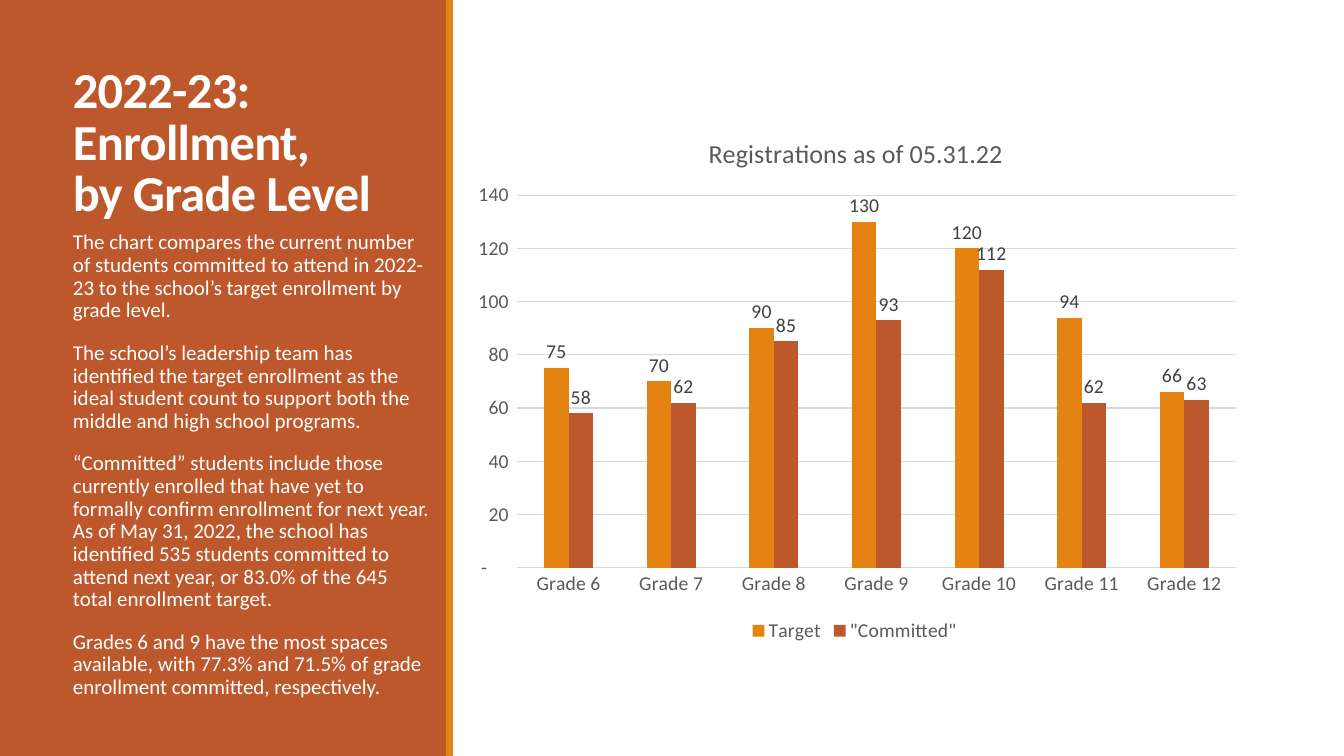
from lxml import etree
from pptx import Presentation
from pptx import util as u
from pptx.chart import data as chart_data
from pptx.dml.color import RGBColor
from pptx.enum import chart as charts, shapes, text
from pptx.oxml.ns import qn

RUST = RGBColor(0xBD, 0x58, 0x2C)
ORANGE = RGBColor(0xE4, 0x83, 0x12)
WHITE = RGBColor(0xFF, 0xFF, 0xFF)
GREY = RGBColor(0x59, 0x59, 0x59)
DARK = RGBColor(0x40, 0x40, 0x40)
PALE = RGBColor(0xD9, 0xD9, 0xD9)

FONT = "Calibri"
COUNT_FORMAT = r'_(* #,##0_);_(* \(#,##0\);_(* "-"??_);_(@_)'

TITLE_LINES = ["2022-23: Enrollment,", "by Grade Level"]
NOTES = [
    "The chart compares the current number of students committed to attend in "
    "2022-23 to the school’s target enrollment by grade level.",
    "The school’s leadership team has identified the target enrollment as the "
    "ideal student count to support both the middle and high school programs.",
    "“Committed” students include those currently enrolled that have yet to "
    "formally confirm enrollment for next year. As of May 31, 2022, the school "
    "has identified 535 students committed to attend next year, or 83.0% of the "
    "645 total enrollment target.",
    "Grades 6 and 9 have the most spaces available, with 77.3% and 71.5% of "
    "grade enrollment committed, respectively.",
]
GRADES = [f"Grade {number}" for number in range(6, 13)]
SERIES = [
    ("Target", ORANGE, [75, 70, 90, 130, 120, 94, 66]),
    ('"Committed"', RUST, [58, 62, 85, 93, 112, 62, 63]),
]


def apply_format(target, values):
    for name, value in values.items():
        setattr(target, name, value)


def style_font(font, size, color, bold=False):
    apply_format(font, {"name": FONT, "size": u.Pt(size), "bold": bold})
    font.color.rgb = color


def add_bar(page, left, top, width, height, color):
    bar = page.shapes.add_shape(
        shapes.MSO_SHAPE.RECTANGLE, *map(u.Pt, (left, top, width, height)))
    bar.shadow.inherit = False
    bar.fill.solid()
    bar.fill.fore_color.rgb = color
    bar.line.fill.background()


def add_text_frame(page, left, top, width, height, anchor):
    box = page.shapes.add_textbox(*map(u.Pt, (left, top, width, height)))
    apply_format(box.text_frame, {"word_wrap": True, "vertical_anchor": anchor})
    return box.text_frame


def add_sidebar(page, left, top, width, height):
    # Coloured panel with its edge stripe
    stripe = 5
    add_bar(page, left, top, width - stripe, height, RUST)
    add_bar(page, left + width - stripe, top, stripe, height, ORANGE)

    # Title
    text_left, text_width = left + 45, width - 53.5
    frame = add_text_frame(page, text_left, top + 36, text_width, 126,
                           text.MSO_ANCHOR.BOTTOM)
    para = frame.paragraphs[0]
    para.line_spacing = 0.85
    for index, line in enumerate(TITLE_LINES):
        if index:
            para.add_line_break()
        span = para.add_run()
        span.text = line
        style_font(span.font, 36, WHITE, bold=True)
        span._r.get_or_add_rPr().set("spc", "-50")

    # Explanatory paragraphs
    frame = add_text_frame(page, text_left, top + 162, text_width, 300,
                           text.MSO_ANCHOR.TOP)
    for index, note in enumerate(NOTES):
        para = frame.add_paragraph() if index else frame.paragraphs[0]
        apply_format(para, {"line_spacing": 0.9, "space_before": u.Pt(12),
                            "space_after": u.Pt(2)})
        span = para.add_run()
        span.text = note
        style_font(span.font, 15, WHITE)


def set_layout(element, index, **fractions):
    for old in element.findall(qn("c:layout")):
        element.remove(old)
    layout = etree.Element(qn("c:layout"))
    manual = etree.SubElement(layout, qn("c:manualLayout"))
    settings = {"xMode": "edge", "yMode": "edge", **fractions}
    if "w" in fractions:
        settings = {"layoutTarget": "inner", **settings}
    for name, value in settings.items():
        etree.SubElement(manual, qn(f"c:{name}")).set("val", str(value))
    element.insert(index, layout)


def add_registrations_chart(page, left, top, width, height):
    table = chart_data.CategoryChartData(number_format=COUNT_FORMAT)
    table.categories = GRADES
    for name, _, values in SERIES:
        table.add_series(name, values)
    chart = page.shapes.add_chart(
        charts.XL_CHART_TYPE.COLUMN_CLUSTERED,
        *map(u.Pt, (left, top, width, height)), table).chart
    style_font(chart.font, 14, GREY)

    # Heading and legend
    chart.has_title = True
    para = chart.chart_title.text_frame.paragraphs[0]
    span = para.add_run()
    span.text = "Registrations as of 05.31.22"
    style_font(span.font, 18.6, GREY)
    set_layout(chart.chart_title._element, 1, x=0.31, y=0.04)
    chart.has_legend = True
    apply_format(chart.legend, {
        "position": charts.XL_LEGEND_POSITION.BOTTOM, "include_in_layout": False})
    style_font(chart.legend.font, 14, GREY)

    # Axes
    for axis in (chart.category_axis, chart.value_axis):
        apply_format(axis, {"major_tick_mark": charts.XL_TICK_MARK.NONE,
                            "minor_tick_mark": charts.XL_TICK_MARK.NONE})
        style_font(axis.tick_labels.font, 14, GREY)
    counts = chart.value_axis
    apply_format(counts, {"minimum_scale": 0, "maximum_scale": 140,
                          "major_unit": 20, "has_major_gridlines": True})
    apply_format(counts.tick_labels, {"number_format": COUNT_FORMAT,
                                      "number_format_is_linked": False})
    counts.format.line.fill.background()
    for line in (chart.category_axis.format.line,
                 counts.major_gridlines.format.line):
        line.color.rgb = PALE
        line.width = u.Pt(0.75)

    # Columns and their labels
    plot = chart.plots[0]
    apply_format(plot, {"gap_width": 219, "overlap": 0,
                        "vary_by_categories": False})
    for series, (_, color, _) in zip(plot.series, SERIES):
        series.format.fill.solid()
        series.format.fill.fore_color.rgb = color
        labels = series.data_labels
        apply_format(labels, {
            "show_value": True, "number_format": COUNT_FORMAT,
            "number_format_is_linked": False,
            "position": charts.XL_LABEL_POSITION.OUTSIDE_END})
        style_font(labels.font, 14, DARK)
    plot_area = chart._chartSpace.find(f".//{qn('c:plotArea')}")
    set_layout(plot_area, 0, x=0.075, y=0.16, w=0.905, h=0.693)


def main():
    deck = Presentation()
    apply_format(deck, {"slide_width": u.Pt(960), "slide_height": u.Pt(540)})
    page = deck.slides.add_slide(deck.slide_layouts[6])
    add_sidebar(page, 0, 0, 323.5, 540)
    add_registrations_chart(page, 327, 78, 567, 384)
    deck.save("out.pptx")


if __name__ == "__main__":
    main()
